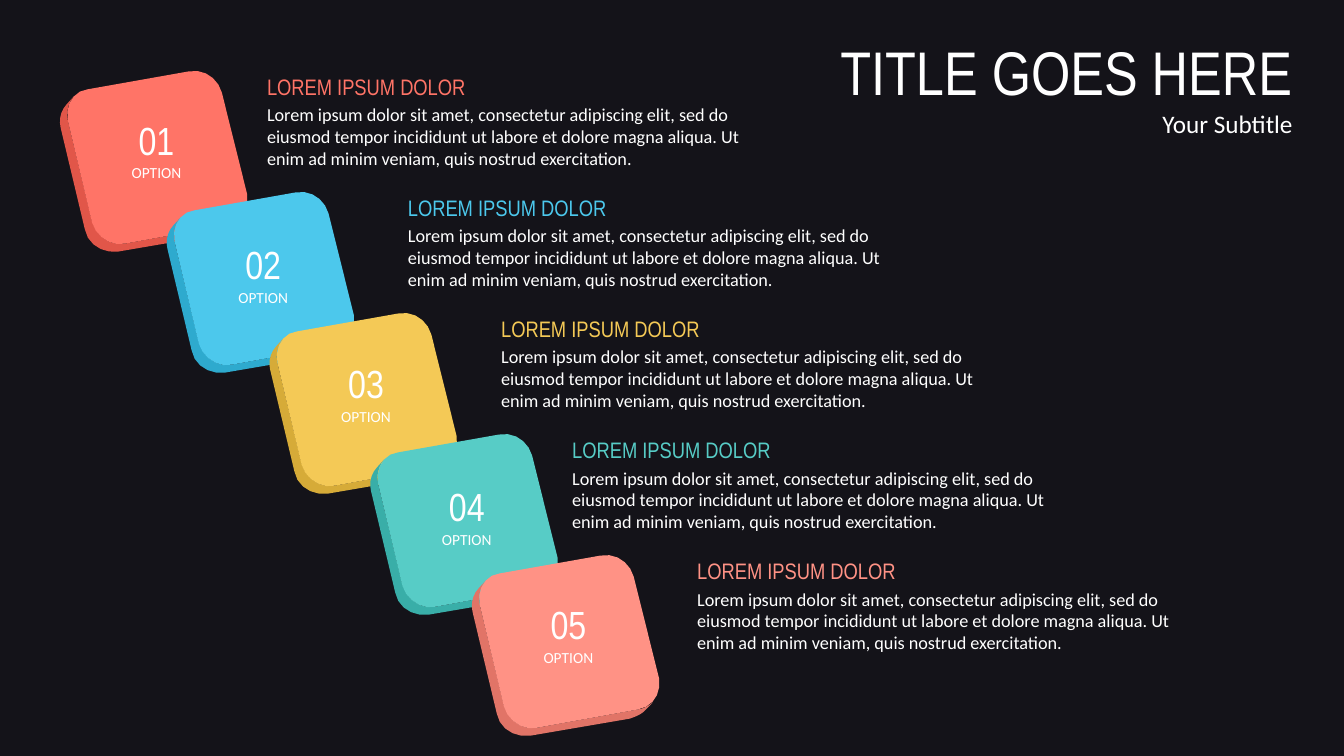
from dataclasses import dataclass

from lxml.etree import SubElement
from pptx import Presentation
from pptx.dml.color import RGBColor
from pptx.enum.shapes import MSO_SHAPE
from pptx.enum.text import MSO_ANCHOR, MSO_AUTO_SIZE, PP_ALIGN
from pptx.oxml.ns import qn
from pptx.shapes.autoshape import Shape
from pptx.shapes.shapetree import GroupShapes, SlideShapes
from pptx.text.text import TextFrame
from pptx.util import Cm, Pt

LEFT, MID, RIGHT = PP_ALIGN.LEFT, PP_ALIGN.CENTER, PP_ALIGN.RIGHT
TOP = MSO_ANCHOR.TOP
FIXED = MSO_AUTO_SIZE.NONE
RECT = MSO_SHAPE.RECTANGLE


@dataclass(frozen=True)
class Theme:
    back: str = "524E67"
    veil: str = "000000"
    alpha: int = 75
    white: str = "FFFFFF"
    head_font: str = "Arial Narrow"
    body_font: str = "Calibri"
    title: int = 44
    sub: int = 18
    number: int = 28
    option: int = 11
    head: int = 16
    body: int = 13
    gap: float = 2.6


@dataclass(frozen=True)
class Step:
    left: float
    drop: float
    text_left: float
    face: str
    side: str


THEME = Theme()
STEPS = [
    Step(1.63, 1.09, 6.48, "FF7467", "E15649"),
    Step(4.32, 1.17, 10.03, "4CC8EC", "2EAACE"),
    Step(6.91, 1.12, 12.38, "F4C956", "D6AB38"),
    Step(9.45, 1.17, 14.17, "57CCC6", "39AEA8"),
    Step(12.01, 1.09, 17.32, "FF9285", "E17467"),
]
WIDE, HIGH = Cm(33.87), Cm(19.05)
FIRST_TOP = 1.72
PITCH = 3.05
HEAD = "LOREM IPSUM DOLOR"
BODY = (
    "Lorem ipsum dolor sit amet, consectetur adipiscing elit, sed do "
    "eiusmod tempor incididunt ut labore et dolore magna aliqua. "
    "Ut enim ad minim veniam, quis nostrud exercitation."
)

Path = list[tuple[float, ...]]
FACE: Path = [
    (4.60, 3.18), (3.96, 0.61),
    (3.86, 0.25, 3.51, 0, 3.12, 0.08), (0.58, 0.53),
    (0.23, 0.56, 0, 0.94, 0.08, 1.32), (0.69, 3.89),
    (0.79, 4.24, 1.17, 4.50, 1.52, 4.42), (4.06, 3.96),
    (4.45, 3.89, 4.65, 3.56, 4.60, 3.18),
]
SIDE: Path = [
    (4.06, 3.96), (1.52, 4.42),
    (1.17, 4.50, 0.79, 4.24, 0.69, 3.86), (0.08, 1.32),
    (0.03, 1.09, 0.10, 0.86, 0.23, 0.71), (0.05, 0.91),
    (-0.10, 1.07, -0.15, 1.30, -0.10, 1.50), (0.51, 4.06),
    (0.58, 4.45, 0.97, 4.67, 1.35, 4.62), (3.86, 4.19),
    (4.01, 4.14, 4.14, 4.09, 4.24, 3.99), (4.45, 3.78),
    (4.34, 3.86, 4.22, 3.94, 4.06, 3.96),
]


def trace(path: Path, cuts: int = 5) -> list[tuple[float, float]]:
    points = [path[0]]
    for part in path[1:]:
        if len(part) == 2:
            points.append(part)
            continue
        nodes = [points[-1], part[:2], part[2:4], part[4:]]
        for cut in range(1, cuts + 1):
            t = cut / cuts
            u = 1 - t
            rates = (u**3, 3 * u * u * t, 3 * u * t * t, t**3)
            points.append(tuple(
                sum(r * n[axis] for r, n in zip(rates, nodes))
                for axis in (0, 1)
            ))
    return points[:-1]


def paint(shape: Shape, color: str) -> None:
    shape.shadow.inherit = False
    shape.fill.solid()
    shape.fill.fore_color.rgb = RGBColor.from_string(color)
    shape.line.fill.background()


def draw_path(shapes: GroupShapes, path: Path, left: float, top: float, color: str) -> None:
    points = [(Cm(left + x), Cm(top + y)) for x, y in trace(path)]
    pen = shapes.build_freeform(*points[0], scale=1.0)
    pen.add_line_segments(points[1:], close=True)
    paint(pen.convert_to_shape(), color)


def set_pair(frame: TextFrame, texts: tuple[str, str], sizes: tuple[int, int],
             color: str, align: PP_ALIGN, gap: float = 0) -> None:
    frame.word_wrap = True
    frame.auto_size = FIXED
    frame.vertical_anchor = TOP
    frame.text = "\n".join(texts)
    looks = (
        (THEME.head_font, sizes[0], color, 0),
        (THEME.body_font, sizes[1], THEME.white, gap),
    )
    for para, (font, size, tint, space) in zip(frame.paragraphs, looks):
        para.alignment = align
        para.space_before = Pt(space)
        for run in para.runs:
            run.font.name = font
            run.font.size = Pt(size)
            run.font.color.rgb = RGBColor.from_string(tint)


def add_box(shapes: SlideShapes | GroupShapes, left: float, top: float,
            width: float, height: float) -> TextFrame:
    return shapes.add_textbox(Cm(left), Cm(top), Cm(width), Cm(height)).text_frame


def draw_veil(shapes: SlideShapes) -> None:
    veil = shapes.add_shape(RECT, 0, 0, WIDE, HIGH)
    paint(veil, THEME.veil)
    tone = veil.element.spPr.find(qn("a:solidFill"))[0]
    SubElement(tone, qn("a:alpha")).set("val", str(THEME.alpha * 1000))
    shapes.title.element.addprevious(veil.element)


def draw_title(title: Shape) -> None:
    title.left, title.top = Cm(17.54), Cm(0.73)
    title.width, title.height = Cm(15.29), Cm(2.9)
    set_pair(title.text_frame, ("TITLE GOES HERE", "Your Subtitle"),
             (THEME.title, THEME.sub), THEME.white, RIGHT)


def draw_step(shapes: SlideShapes, index: int, step: Step) -> None:
    top = FIRST_TOP + PITCH * index
    tile = shapes.add_group_shape().shapes
    draw_path(tile, SIDE, step.left, top, step.side)
    draw_path(tile, FACE, step.left, top, step.face)
    label = add_box(tile, step.left + 1.12, top + step.drop, 2.39, 1.96)
    set_pair(label, (f"{index + 1:02}", "OPTION"),
             (THEME.number, THEME.option), THEME.white, MID)
    note = add_box(shapes, step.text_left, top, 12.9, 2.72)
    set_pair(note, (HEAD, BODY), (THEME.head, THEME.body), step.face, LEFT, THEME.gap)


def main() -> None:
    deck = Presentation()
    deck.slide_width, deck.slide_height = WIDE, HIGH
    slide = deck.slides.add_slide(deck.slide_layouts[5])
    slide.background.fill.solid()
    slide.background.fill.fore_color.rgb = RGBColor.from_string(THEME.back)
    draw_veil(slide.shapes)
    draw_title(slide.shapes.title)
    for index, step in enumerate(STEPS):
        draw_step(slide.shapes, index, step)
    deck.save("out.pptx")


if __name__ == "__main__":
    main()
